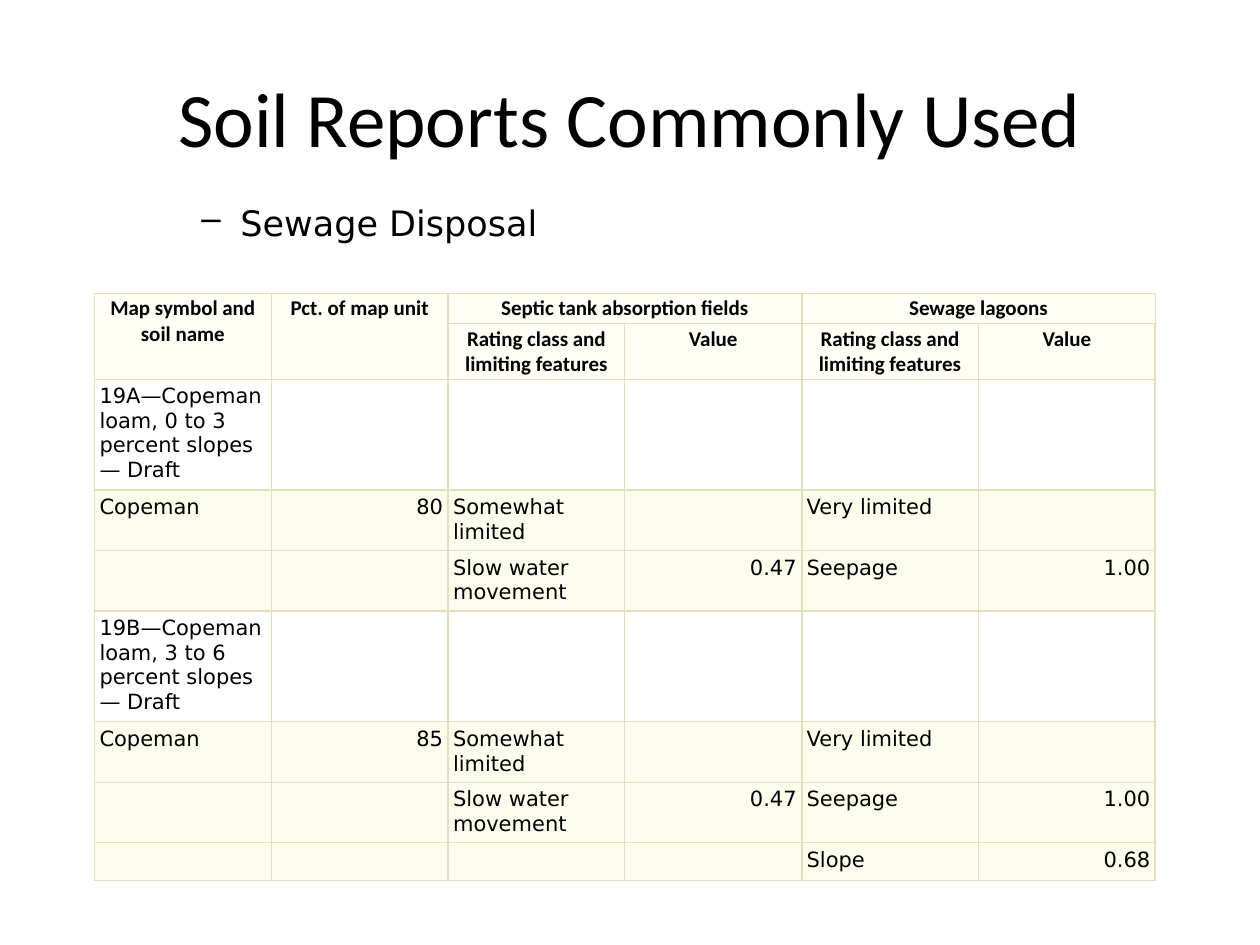
import dataclasses

import lxml.etree
import pptx
import pptx.dml.color
import pptx.enum.text
import pptx.oxml.ns
import pptx.util

Inches = pptx.util.Inches
Pt = pptx.util.Pt
Align = pptx.enum.text.PP_ALIGN
Anchor = pptx.enum.text.MSO_ANCHOR
qn = pptx.oxml.ns.qn


@dataclasses.dataclass(frozen=True)
class Theme:
    """Hold the colours, fonts and sizes of the slide."""
    ink: str = "000000"
    rule: str = "E5DEBC"
    head: str = "FFFFF5"
    unit: str = "FFFFFF"
    soil: str = "FDFDEE"
    sans: str = "Calibri"
    plain: str = "DejaVu Sans"
    big: int = 44
    mid: int = 20
    small: int = 12
    thin: float = 0.75
    thick: float = 1.5


THEME = Theme()
HEADS = [
    ["Map symbol and soil name", "Pct. of map unit", "Septic tank absorption fields", "",
     "Sewage lagoons", ""],
    ["", ""] + ["Rating class and limiting features", "Value"] * 2,
]
ROWS = [
    ["19A—Copeman loam, 0 to 3 percent slopes — Draft", "", "", "", "", ""],
    ["Copeman", "80", "Somewhat limited", "", "Very limited", ""],
    ["", "", "Slow water movement", "0.47", "Seepage", "1.00"],
    ["19B—Copeman loam, 3 to 6 percent slopes — Draft", "", "", "", "", ""],
    ["Copeman", "85", "Somewhat limited", "", "Very limited", ""],
    ["", "", "Slow water movement", "0.47", "Seepage", "1.00"],
    ["", "", "", "", "Slope", "0.68"],
]
HIGHS = [0.24, 0.43, 0.78, 0.43, 0.43, 0.78, 0.43, 0.43, 0.3]
SPANS = [(0, 0, 1, 0), (0, 1, 1, 1), (0, 2, 0, 3), (0, 4, 0, 5)]


def write(frame, text, size, font=THEME.plain, bold=False, align=Align.LEFT):
    """Write one formatted paragraph in a text frame and return it."""
    para = frame.paragraphs[0]
    para.alignment = align
    if text:
        run = para.add_run()
        run.text = text
        run.font.size = Pt(size)
        run.font.name = font
        run.font.bold = bold
        run.font.color.rgb = pptx.dml.color.RGBColor.from_string(THEME.ink)
    else:
        tail = lxml.etree.SubElement(para._p, qn("a:endParaRPr"))
        tail.set("sz", str(size * 100))
    return para


def place(shape, box):
    """Move a shape to a box of left, top, width and height."""
    shape.left, shape.top, shape.width, shape.height = map(Inches, box)


def add_title(slide, box):
    """Set the title in its placeholder."""
    title = slide.shapes.title
    place(title, box)
    title.text_frame.vertical_anchor = Anchor.MIDDLE
    write(title.text_frame, "Soil Reports Commonly Used", THEME.big,
          font=THEME.sans, align=Align.CENTER)


def add_topic(slide, box):
    """Add the dashed topic line."""
    frame = slide.shapes.add_textbox(*map(Inches, box)).text_frame
    frame.word_wrap = True
    para = write(frame, "Sewage Disposal", THEME.mid)
    para.space_before = Pt(THEME.mid * 0.2)
    props = para._p.get_or_add_pPr()
    props.set("marL", str(Inches(0.81)))
    props.set("indent", str(Inches(-0.31)))
    lxml.etree.SubElement(props, qn("a:buChar")).set("char", "–")


def edge(cell, col):
    """Rule the four sides of a cell, with thick lines between column groups."""
    props = cell._tc.get_or_add_tcPr()
    left = THEME.thick if col in (2, 4) else THEME.thin
    right = THEME.thick if col in (1, 3, 5) else THEME.thin
    sides = {"L": left, "R": right, "T": THEME.thin, "B": THEME.thin}
    for spot, (side, width) in enumerate(sides.items()):
        line = lxml.etree.Element(qn(f"a:ln{side}"), w=str(Pt(width)))
        fill = lxml.etree.SubElement(line, qn("a:solidFill"))
        lxml.etree.SubElement(fill, qn("a:srgbClr")).set("val", THEME.rule)
        props.insert(spot, line)


def fill_cell(cell, text, row, col):
    """Format and fill one cell by its place in the table."""
    head = row < len(HEADS)
    pad = Inches(0.02 if head else 0.04)
    cell.margin_left = cell.margin_right = cell.margin_top = cell.margin_bottom = pad
    unit = row in (2, 5)
    tint = THEME.head if head else THEME.unit if unit else THEME.soil
    cell.fill.solid()
    cell.fill.fore_color.rgb = pptx.dml.color.RGBColor.from_string(tint)
    edge(cell, col)
    if head:
        write(cell.text_frame, text, THEME.small, font=THEME.sans, bold=True,
              align=Align.CENTER)
    else:
        write(cell.text_frame, text, THEME.small,
              align=Align.RIGHT if col % 2 else Align.LEFT)


def add_report(slide, box):
    """Add the table of soil ratings."""
    data = HEADS + ROWS
    count = len(data[0])
    table = slide.shapes.add_table(len(data), count, *map(Inches, box)).table
    table.first_row = table.horz_banding = False
    for col in table.columns:
        col.width = Inches(box[2] / count)
    for row, high in zip(table.rows, HIGHS):
        row.height = Inches(high)
    for top, left, low, right in SPANS:
        table.cell(top, left).merge(table.cell(low, right))
    for row, texts in enumerate(data):
        for col, text in enumerate(texts):
            fill_cell(table.cell(row, col), text, row, col)


def main():
    """Build and save the slide."""
    deck = pptx.Presentation()
    deck.slide_width, deck.slide_height = Inches(10), Inches(7.5)
    slide = deck.slides.add_slide(deck.slide_layouts[5])
    add_title(slide, (0.5, 0.3, 9, 1.25))
    add_topic(slide, (1, 1.55, 9, 4.95))
    add_report(slide, (0.75, 2.33, 8.42, sum(HIGHS)))
    deck.save("out.pptx")


if __name__ == "__main__":
    main()
